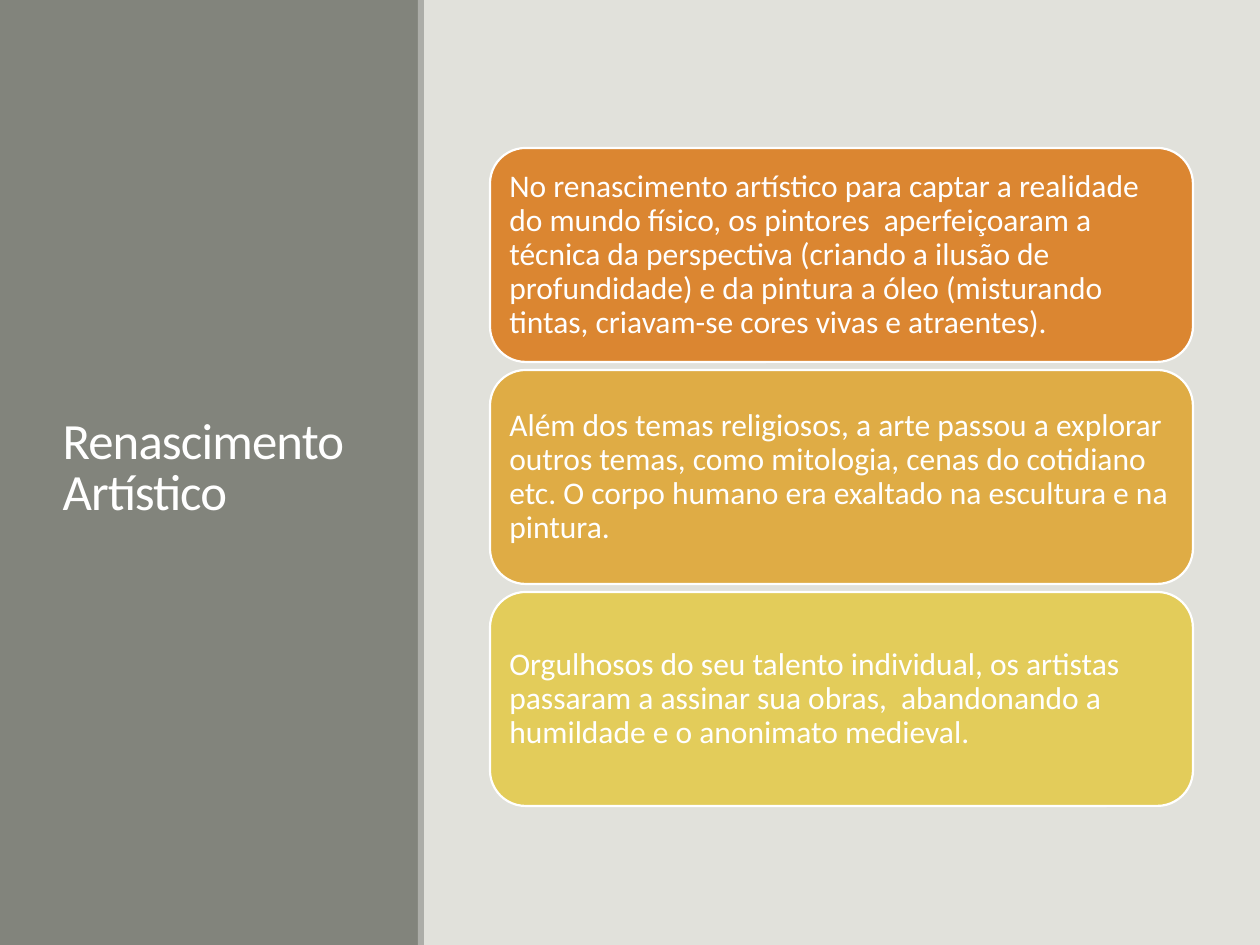
from pptx import Presentation
from pptx.dml.color import RGBColor
from pptx.enum.shapes import MSO_SHAPE as Shape
from pptx.enum.text import MSO_ANCHOR as Anchor, MSO_AUTO_SIZE as AutoSize, PP_ALIGN as Align
from pptx.util import Emu, Pt

PX_PER_INCH = 126
FONT = "Calibri"
WHITE = "FFFFFF"
BACKGROUND = "E1E1DB"
PANEL = "82847C"
EDGE = "ACADA8"
CARD_LEFT, CARD_TOP, CARD_WIDTH, CARD_HEIGHT, CARD_GAP = 490, 148, 703, 214, 8
CARD_INSET = 9
CARDS = [
    ("DB8631", "No renascimento artístico para captar a realidade do mundo físico, "
               "os pintores  aperfeiçoaram a técnica da perspectiva (criando a ilusão de "
               "profundidade) e da pintura a óleo (misturando tintas, criavam-se cores "
               "vivas e atraentes)."),
    ("DFAC45", "Além dos temas religiosos, a arte passou a explorar outros temas, como "
               "mitologia, cenas do cotidiano etc. O corpo humano era exaltado na "
               "escultura e na pintura."),
    ("E3CC5A", "Orgulhosos do seu talento individual, os artistas passaram a assinar sua "
               "obras,  abandonando a humildade e o anonimato medieval."),
]


def px(length):
    """Turn pixels into EMU."""
    return Emu(round(length * 914400 / PX_PER_INCH))


def color(hex_code):
    """Turn a hex string into a colour."""
    return RGBColor.from_string(hex_code)


def add_block(page, kind, left, top, width, height, fill):
    """Add a flat filled shape without an outline."""
    block = page.shapes.add_shape(kind, px(left), px(top), px(width), px(height))
    block.shadow.inherit = False
    block.fill.solid()
    block.fill.fore_color.rgb = color(fill)
    block.line.fill.background()
    return block


def write(box, text, size, line_spacing):
    """Write one left-aligned, vertically centred paragraph and return its run."""
    frame = box.text_frame
    frame.text = text
    frame.word_wrap = True
    frame.auto_size = AutoSize.NONE
    frame.vertical_anchor = Anchor.MIDDLE
    para = frame.paragraphs[0]
    para.alignment = Align.LEFT
    para.line_spacing = line_spacing
    span = para.runs[0]
    span.font.name = FONT
    span.font.size = Pt(size)
    span.font.color.rgb = color(WHITE)
    return span


def place_title(page, text):
    """Put the title placeholder on top of the side panel."""
    title = page.shapes.title
    title.left, title.top, title.width, title.height = map(px, (50, 72, 319, 795))
    span = write(title, text, 29, 0.85)
    span.font._element.set("spc", "-50")
    title.element.getparent().append(title.element)


def add_card(page, top, fill, text):
    """Add a rounded card with its text."""
    card = add_block(page, Shape.ROUNDED_RECTANGLE, CARD_LEFT, top, CARD_WIDTH, CARD_HEIGHT, fill)
    card.line.color.rgb = color(WHITE)
    card.line.width = Pt(1.25)
    write(card, text, 18, 0.9)
    frame = card.text_frame
    frame.margin_left = frame.margin_right = px(CARD_INSET)
    frame.margin_top = frame.margin_bottom = px(CARD_INSET)


def main():
    """Build the slide and save it."""
    deck = Presentation()
    deck.slide_width, deck.slide_height = px(1260), px(945)
    page = deck.slides.add_slide(deck.slide_layouts[5])
    page.background.fill.solid()
    page.background.fill.fore_color.rgb = color(BACKGROUND)
    add_block(page, Shape.RECTANGLE, 0, 0, 418, 945, PANEL)
    add_block(page, Shape.RECTANGLE, 418, 0, 6, 945, EDGE)
    place_title(page, "Renascimento Artístico")
    for index, (fill, text) in enumerate(CARDS):
        add_card(page, CARD_TOP + index * (CARD_HEIGHT + CARD_GAP), fill, text)
    deck.save("out.pptx")


if __name__ == "__main__":
    main()
